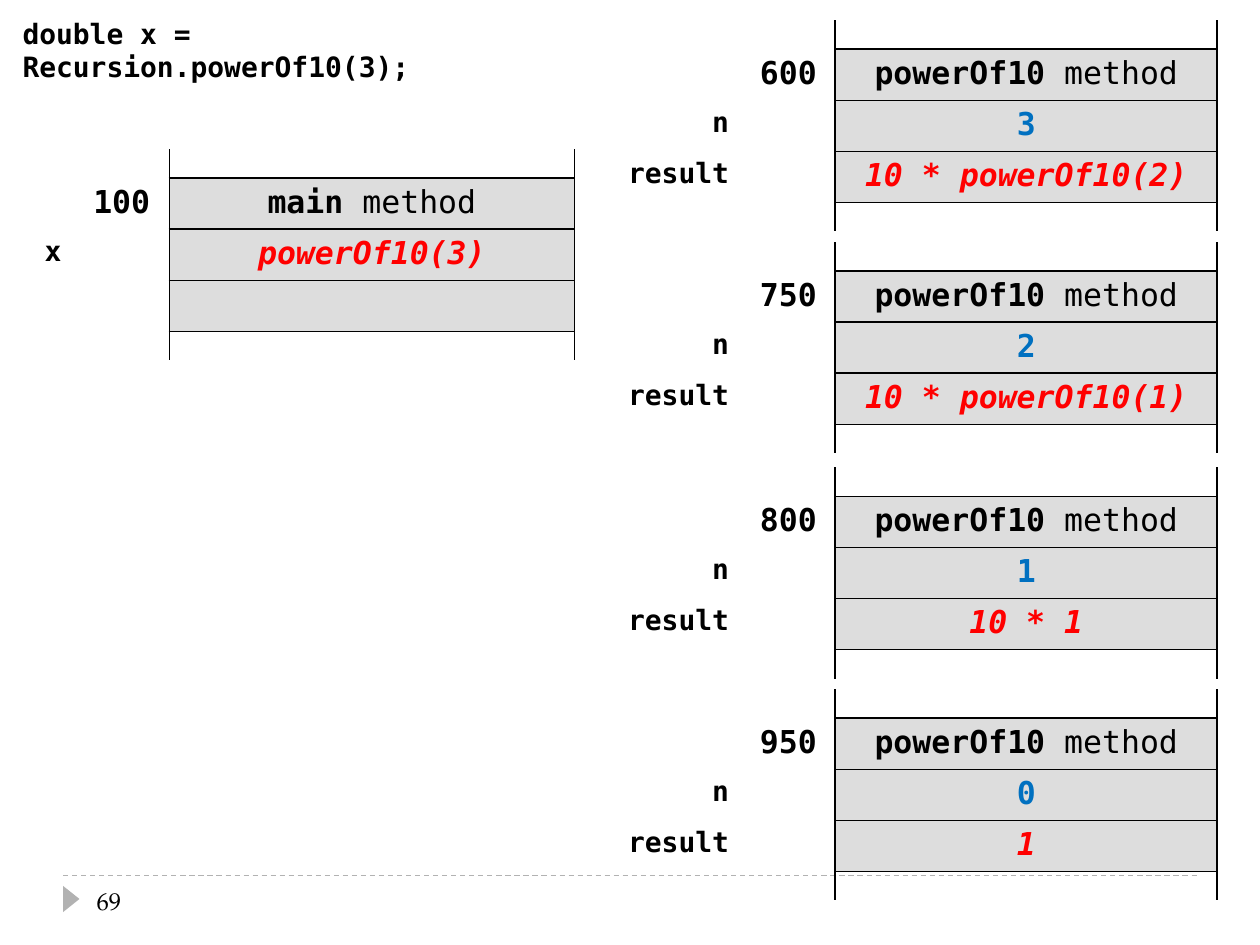
from lxml import etree
from pptx import Presentation
from pptx.dml.color import RGBColor
from pptx.enum.dml import MSO_LINE
from pptx.enum.shapes import MSO_CONNECTOR, MSO_SHAPE
from pptx.enum.text import MSO_ANCHOR, PP_ALIGN
from pptx.oxml.ns import qn
from pptx.util import Pt

DASH = MSO_LINE.DASH
STRAIGHT = MSO_CONNECTOR.STRAIGHT
TRIANGLE = MSO_SHAPE.ISOSCELES_TRIANGLE
MIDDLE = MSO_ANCHOR.MIDDLE
LEFT, CENTER, RIGHT = PP_ALIGN.LEFT, PP_ALIGN.CENTER, PP_ALIGN.RIGHT

BLACK = RGBColor(0x00, 0x00, 0x00)
GRAY = RGBColor(0xB2, 0xB2, 0xB2)
CELL_GRAY = RGBColor(0xDD, 0xDD, 0xDD)
BLUE = RGBColor(0x00, 0x70, 0xC0)
RED = RGBColor(0xFF, 0x00, 0x00)

MONO = "DejaVu Sans Mono"
SERIF = "TeX Gyre Pagella"

EDGE_ROW, ROW = 16.6, 29.2
ROWS = [EDGE_ROW, ROW, ROW, ROW, EDGE_ROW]
FRAME_SIDES = ["LRB", "LRTB", "LRTB", "LRTB", "LRT"]


def add_text(p, text, size=18, font=MONO, color=BLACK, bold=True, italic=False, align=LEFT):
    p.alignment = align
    r = p.add_run()
    r.text = text
    r.font.size = Pt(size)
    r.font.name = font
    r.font.color.rgb = color
    r.font.bold = bold
    r.font.italic = italic


def add_text_box(s, text, left, top, width, height, **fmt):
    tf = s.shapes.add_textbox(Pt(left), Pt(top), Pt(width), Pt(height)).text_frame
    tf.word_wrap = True
    add_text(tf.paragraphs[0], text, **fmt)
    return tf


def set_borders(cell, sides):
    tcPr = cell._tc.get_or_add_tcPr()
    for side in "LRTB":
        ln = etree.SubElement(tcPr, qn(f"a:ln{side}"), w=str(Pt(1)))
        if side in sides:
            fill = etree.SubElement(ln, qn("a:solidFill"))
            etree.SubElement(fill, qn("a:srgbClr"), val=str(BLACK))
        else:
            etree.SubElement(ln, qn("a:noFill"))


def shrink_empty(cell):
    cell.margin_top = cell.margin_bottom = 0
    p = cell.text_frame.paragraphs[0]
    etree.SubElement(p._p, qn("a:endParaRPr"), sz="800")


def add_stack_frame(s, left, top, cols, address, method, variables):
    tbl = s.shapes.add_table(len(ROWS), len(cols), Pt(left), Pt(top),
                             Pt(sum(cols)), Pt(sum(ROWS))).table
    tbl.first_row = tbl.horz_banding = False
    for column, width in zip(tbl.columns, cols):
        column.width = Pt(width)
    for row, height in zip(tbl.rows, ROWS):
        row.height = Pt(height)

    add_text(tbl.cell(1, 1).text_frame.paragraphs[0], address, align=CENTER)
    p = tbl.cell(1, 2).text_frame.paragraphs[0]
    add_text(p, f"{method} ", align=CENTER)
    add_text(p, "method", bold=False, align=CENTER)
    for i, (name, value, color) in enumerate(variables, 2):
        add_text(tbl.cell(i, 0).text_frame.paragraphs[0], name, size=16, align=RIGHT)
        add_text(tbl.cell(i, 2).text_frame.paragraphs[0], value, color=color,
                 italic=color == RED, align=CENTER)

    for i, frame_sides in enumerate(FRAME_SIDES):
        for j, sides in enumerate(["", "R", frame_sides]):
            cell = tbl.cell(i, j)
            set_borders(cell, sides)
            if sides == "LRTB":
                cell.fill.solid()
                cell.fill.fore_color.rgb = CELL_GRAY
            else:
                cell.fill.background()
            if not cell.text_frame.text:
                shrink_empty(cell)


def add_footer(s, left, top, width, number):
    rule = s.shapes.add_connector(STRAIGHT, Pt(left), Pt(top), Pt(left + width), Pt(top))
    rule.line.color.rgb = GRAY
    rule.line.width = Pt(0.75)
    rule.line.dash_style = DASH
    etree.SubElement(rule._element.spPr, qn("a:effectLst"))

    marker = s.shapes.add_shape(TRIANGLE, Pt(left - 2.8), Pt(top + 8.7), Pt(15), Pt(9.4))
    marker.rotation = 90
    marker.shadow.inherit = False
    marker.fill.solid()
    marker.fill.fore_color.rgb = GRAY
    marker.line.fill.background()

    tf = add_text_box(s, number, left + 12.2, top, 156, 28.8,
                      size=14, font=SERIF, bold=False)
    tf.vertical_anchor = MIDDLE


def main():
    prs = Presentation()
    prs.slide_width, prs.slide_height = Pt(720), Pt(540)
    s = prs.slides.add_slide(prs.slide_layouts[6])

    add_footer(s, 36, 500.3, 648, "69")
    calls = [
        (11.5, "600", "3", "10 * powerOf10(2)"),
        (138.3, "750", "2", "10 * powerOf10(1)"),
        (267, "800", "1", "10 * 1"),
        (393.8, "950", "0", "1"),
    ]
    for top, address, n, result in calls:
        add_stack_frame(s, 339.8, top, [84, 53.5, 218.3], address, "powerOf10",
                        [("n", n, BLUE), ("result", result, RED)])
    add_stack_frame(s, 4.3, 85.2, [38, 54.5, 231.4], "100", "main",
                    [("x", "powerOf10(3)", RED)])
    add_text_box(s, "double x = Recursion.powerOf10(3);", 5.8, 5.8, 314.6, 26.6, size=16)

    prs.save("out.pptx")


if __name__ == "__main__":
    main()
